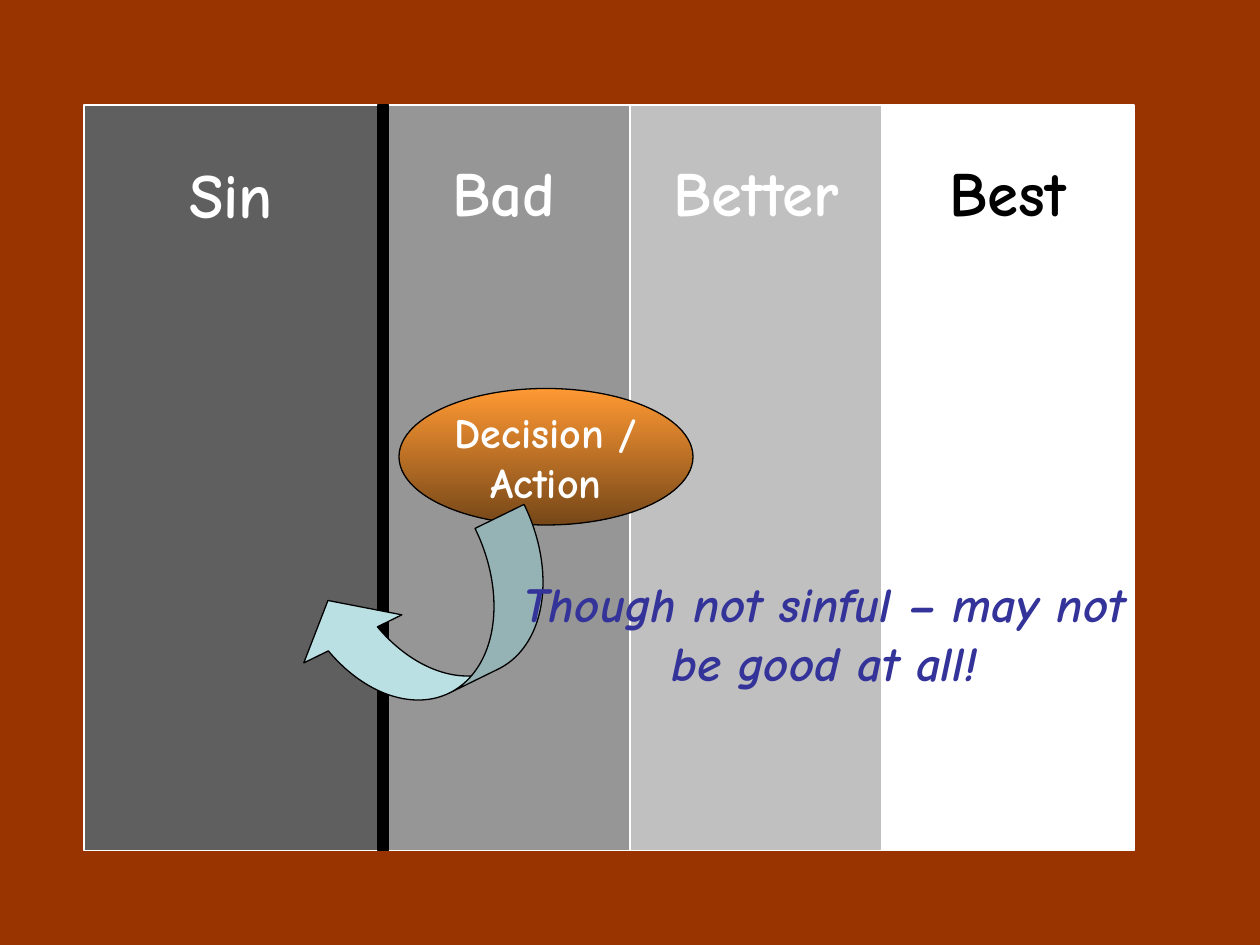
from collections import namedtuple

from pptx import Presentation
from pptx.dml.color import RGBColor
from pptx.enum.shapes import MSO_SHAPE
from pptx.enum.text import MSO_ANCHOR, MSO_AUTO_SIZE, PP_ALIGN
from pptx.util import Emu, Pt

PX = 7620
FONT = "Comic Neue"
Box = namedtuple("Box", "left top width height")
Column = namedtuple("Column", "title width fill ink inset label_top")

COLUMNS = [
    Column("Sin", 280, "5F5F5F", "FFFFFF", 40, 42),
    Column("Bad", 240, "969696", "FFFFFF", 20, 40),
    Column("Better", 240, "C0C0C0", "FFFFFF", 0, 40),
    Column("Best", 240, "FFFFFF", "000000", 20, 40),
]


def color(value):
    return RGBColor.from_string(value)


def emu(box):
    return [Emu(length * PX) for length in box]


def write(frame, lines, size, ink, italic=False):
    for index, line in enumerate(lines):
        para = frame.add_paragraph() if index else frame.paragraphs[0]
        para.text = line
        para.alignment = PP_ALIGN.CENTER
        para.font.name = FONT
        para.font.size = Pt(size)
        para.font.bold = True
        para.font.italic = italic
        para.font.color.rgb = color(ink)


def add_text(page, box, text, size, ink, italic=False):
    frame = page.shapes.add_textbox(*emu(box)).text_frame
    frame.word_wrap = True
    frame.auto_size = MSO_AUTO_SIZE.SHAPE_TO_FIT_TEXT
    write(frame, [text], size, ink, italic)


def add_figure(page, kind, box, fill, line="000000"):
    figure = page.shapes.add_shape(kind, *emu(box))
    figure.shadow.inherit = False
    figure.fill.solid()
    figure.fill.fore_color.rgb = color(fill)
    figure.line.color.rgb = color(line)
    figure.line.width = Pt(0.75)
    return figure


def add_scale(page, box):
    left = box.left
    labels = []
    for column in COLUMNS:
        area = Box(left, box.top, column.width, box.height)
        add_figure(page, MSO_SHAPE.RECTANGLE, area, column.fill, "FFFFFF")
        label = Box(left + column.inset, box.top + column.label_top,
                    column.width - 2 * column.inset, 84)
        labels.append((label, column))
        left += column.width
    divider = Box(box.left + COLUMNS[0].width, box.top, 10, box.height)
    add_figure(page, MSO_SHAPE.RECTANGLE, divider, "000000")
    for label, column in labels:
        add_text(page, label, column.title, 36, column.ink)


def add_decision(page, box):
    oval = add_figure(page, MSO_SHAPE.OVAL, box, "FF9933")
    oval.fill.gradient()
    oval.fill.gradient_angle = 270
    for stop, position, shade in zip(oval.fill.gradient_stops, (0, 1), ("FF9933", "764718")):
        stop.position = position
        stop.color.rgb = color(shade)
    frame = oval.text_frame
    frame.word_wrap = False
    frame.vertical_anchor = MSO_ANCHOR.MIDDLE
    write(frame, ["Decision /", "Action"], 24, "FFFFFF")


def add_outcome(page, box):
    arrow_box = Box(box.left, box.top, 130, 260)
    arrow = add_figure(page, MSO_SHAPE.CURVED_LEFT_ARROW, arrow_box, "BBE0E3")
    arrow.rotation = 63.9
    for index, value in enumerate((0.4, 0.8, 0.333)):
        arrow.adjustments[index] = value
    message = Box(box.left + 134, box.top + 74, box.width - 134, 124)
    add_text(page, message, "Though not sinful – may not be good at all!", 28, "333399", True)


def main():
    deck = Presentation()
    deck.slide_width, deck.slide_height = Emu(1200 * PX), Emu(900 * PX)
    page = deck.slides.add_slide(deck.slide_layouts[6])
    page.background.fill.solid()
    page.background.fill.fore_color.rgb = color("993300")
    add_scale(page, Box(80, 100, 1000, 710))
    add_decision(page, Box(380, 370, 280, 130))
    add_outcome(page, Box(346, 466, 744, 260))
    deck.save("out.pptx")


if __name__ == "__main__":
    main()
